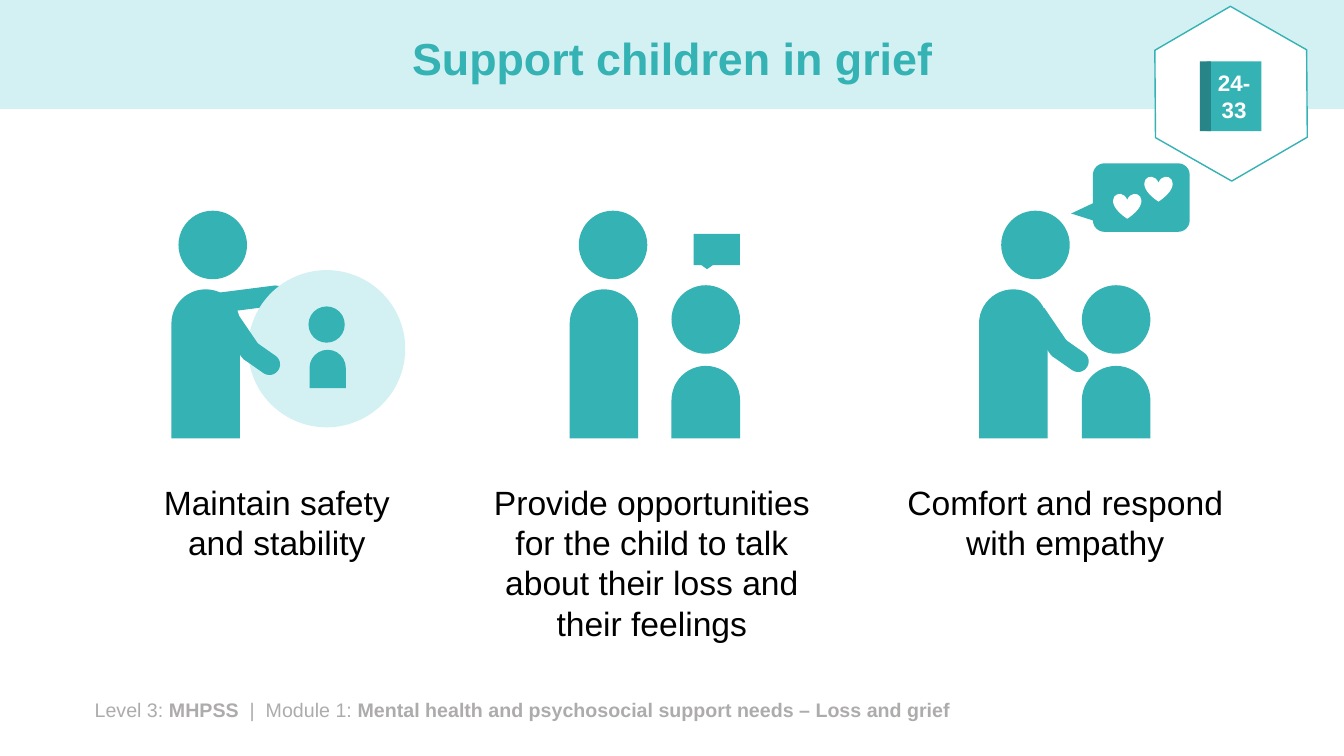
from pptx import Presentation
from pptx.dml.color import RGBColor
from pptx.enum.shapes import MSO_SHAPE
from pptx.enum.text import MSO_ANCHOR, MSO_AUTO_SIZE, PP_ALIGN
from pptx.util import Inches, Pt

TEAL = RGBColor(0x35, 0xB2, 0xB4)
DARK = RGBColor(0x27, 0x85, 0x87)
PALE = RGBColor(0xD3, 0xF1, 0xF2)
GREY = RGBColor(0xAE, 0xAB, 0xAB)
WHITE = RGBColor(0xFF, 0xFF, 0xFF)
BLACK = RGBColor(0, 0, 0)
RECT, OVAL, HEART = MSO_SHAPE.RECTANGLE, MSO_SHAPE.OVAL, MSO_SHAPE.HEART
ROUND, HEX = MSO_SHAPE.ROUND_2_SAME_RECTANGLE, MSO_SHAPE.HEXAGON
BUBBLE = MSO_SHAPE.ROUNDED_RECTANGULAR_CALLOUT
CENTER, MIDDLE = PP_ALIGN.CENTER, MSO_ANCHOR.MIDDLE
GROW = MSO_AUTO_SIZE.SHAPE_TO_FIT_TEXT
FONT = "Arial"

# Content
TITLE = "Support children in grief"
PAGES = "24-33"
FOOTER = [  # text, bold
    ("Level 3: ", False),
    ("MHPSS", True),
    ("  |  Module 1: ", False),
    ("Mental health and psychosocial support needs – Loss and grief", True),
]
LABELS = [  # text, left, width, height
    ("Maintain safety and stability", 1.27, 2.95, 0.91),
    ("Provide opportunities for the child to talk about their loss and "
     "their feelings", 4.61, 3.71, 1.72),
    ("Comfort and respond with empathy", 8.71, 3.71, 0.91),
]
LABEL_TOP = 4.73
HEAD = 0.68  # head size and body width
HEARTS = [(11.04, 1.92), (11.35, 1.75)]


def add(parent, kind, left, top, width, height, fill=TEAL, adj=(), turn=0):
    shape = parent.add_shape(kind, Inches(left), Inches(top),
                             Inches(width), Inches(height))
    shape.shadow.inherit = False
    shape.fill.solid()
    shape.fill.fore_color.rgb = fill
    shape.line.fill.background()
    for i, value in enumerate(adj):
        shape.adjustments[i] = value
    shape.rotation = turn
    return shape


def style(font, size, color, bold=False):
    font.name, font.size, font.bold = FONT, Pt(size), bold
    font.color.rgb = color


def textbox(left, top, width, height):
    frame = shapes.add_textbox(Inches(left), Inches(top), Inches(width),
                               Inches(height)).text_frame
    frame.word_wrap = True
    frame.auto_size = GROW
    return frame.paragraphs[0]


def adult(group, left, head):
    add(group, ROUND, left, 2.87, HEAD, 1.48, adj=(0.5, 0))
    add(group, OVAL, head, 2.09, HEAD, HEAD)


def child(group, left):
    add(group, ROUND, left, 3.63, HEAD, 0.72, adj=(0.5, 0))
    add(group, OVAL, left, 2.83, HEAD, HEAD)


def arm(group, left, top):
    add(group, ROUND, left, top, 0.21, 0.51, adj=(0.49, 0), turn=145.7)
    add(group, ROUND, left + 0.22, top + 0.3, 0.21, 0.35, adj=(0.49, 0),
        turn=125)


prs = Presentation()
prs.slide_width, prs.slide_height = Inches(13.33), Inches(7.5)
slide = prs.slides.add_slide(prs.slide_layouts[5])
shapes = slide.shapes

# Title on its band
title = shapes.title
band = add(shapes, RECT, 0, 0, 13.33, 1.08, PALE)
title.element.addprevious(band.element)
title.left, title.top = Inches(0.92), Inches(0.13)
title.width, title.height = Inches(11.5), Inches(0.95)
title.text_frame.text = TITLE
title.text_frame.vertical_anchor = MIDDLE
para = title.text_frame.paragraphs[0]
para.alignment, para.line_spacing = CENTER, 0.9
style(para.font, 32, TEAL, True)

# Footer
para = textbox(0.84, 6.87, 11.35, 0.34)
for text, bold in FOOTER:
    run = para.add_run()
    run.text = text
    style(run.font, 14, GREY, bold)

# Labels
for text, left, width, height in LABELS:
    para = textbox(left, LABEL_TOP, width, height)
    para.text = text
    para.alignment = CENTER
    style(para.font, 24, BLACK)

# Safety: adult shielding a child in a circle
safe = shapes.add_group_shape().shapes
add(safe, ROUND, 2.34, 2.57, 0.2, 0.8, adj=(0.49, 0), turn=82.7)
add(safe, OVAL, 2.46, 2.68, 1.56, 1.56, PALE)
adult(safe, 1.7, 1.77)
arm(safe, 2.29, 3.1)
add(safe, ROUND, 3.07, 3.47, 0.36, 0.38, adj=(0.5, 0))
add(safe, OVAL, 3.06, 3.04, 0.36, 0.36)

# Talk: child speaking to an adult
talk = shapes.add_group_shape().shapes
child(talk, 6.66)
adult(talk, 5.65, 5.74)
add(talk, BUBBLE, 6.88, 2.32, 0.46, 0.31, adj=(-0.21, 0.63, 0))

# Comfort: adult reaching out with kind words
care = shapes.add_group_shape().shapes
child(care, 10.73)
adult(care, 9.71, 9.93)
arm(care, 10.31, 3.07)
add(care, BUBBLE, 10.84, 1.62, 0.96, 0.68, adj=(-0.725, 0.233, 0.167))
for left, top in HEARTS:
    add(care, HEART, left, top, 0.28, 0.25, WHITE)

# Page badge
badge = add(shapes, HEX, 11.34, 0.18, 1.74, 1.5, WHITE, (0.29,), 29.7)
badge.line.color.rgb = TEAL
badge.line.width = Pt(1)
book = shapes.add_group_shape().shapes
cover = add(book, RECT, 11.97, 0.61, 0.54, 0.69)
cover.text_frame.word_wrap = True
cover.text_frame.vertical_anchor = MIDDLE
para = cover.text_frame.paragraphs[0]
para.text = PAGES
para.alignment = CENTER
style(para.font, 16, WHITE, True)
add(book, RECT, 11.9, 0.61, 0.11, 0.69, DARK)

prs.save("out.pptx")
